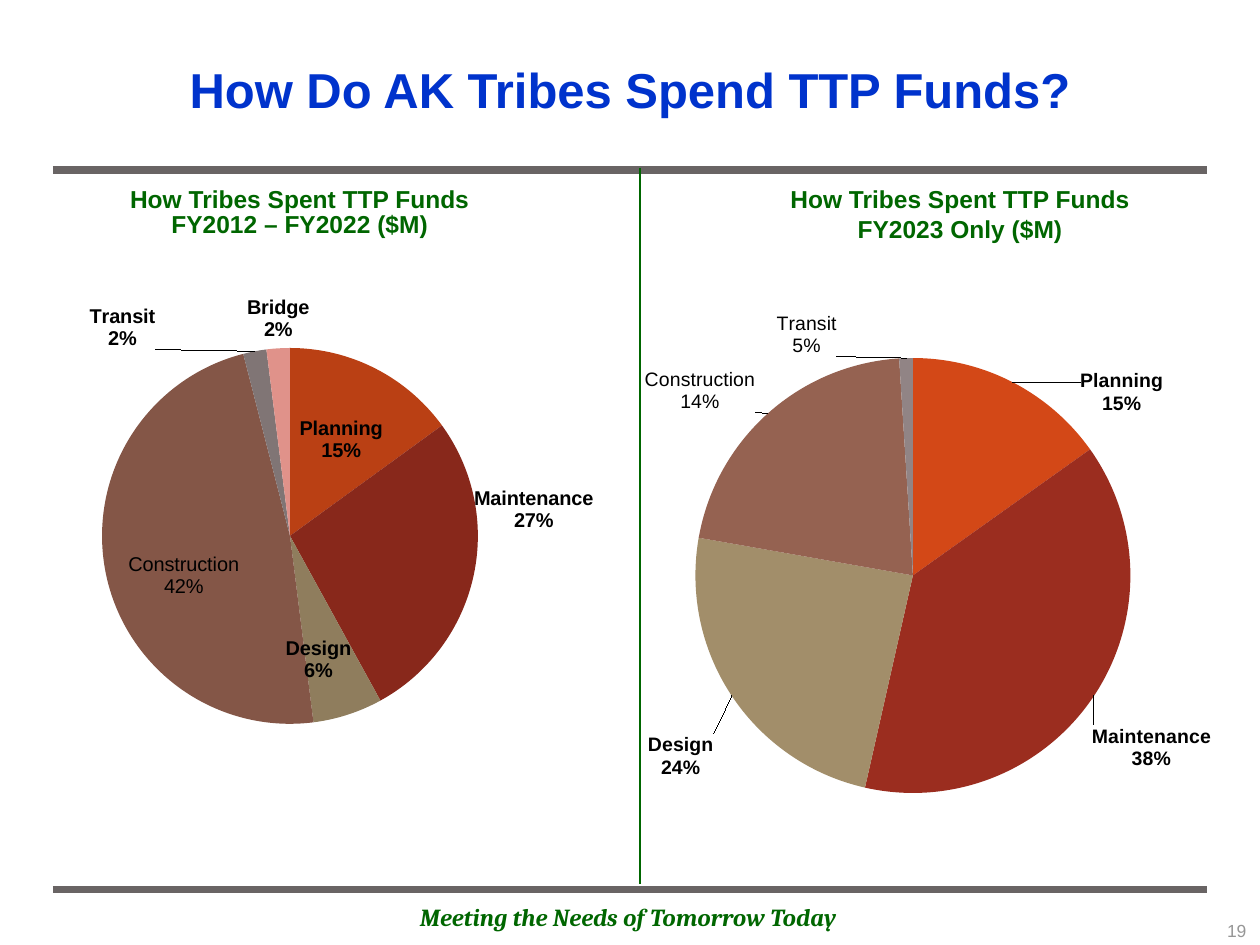
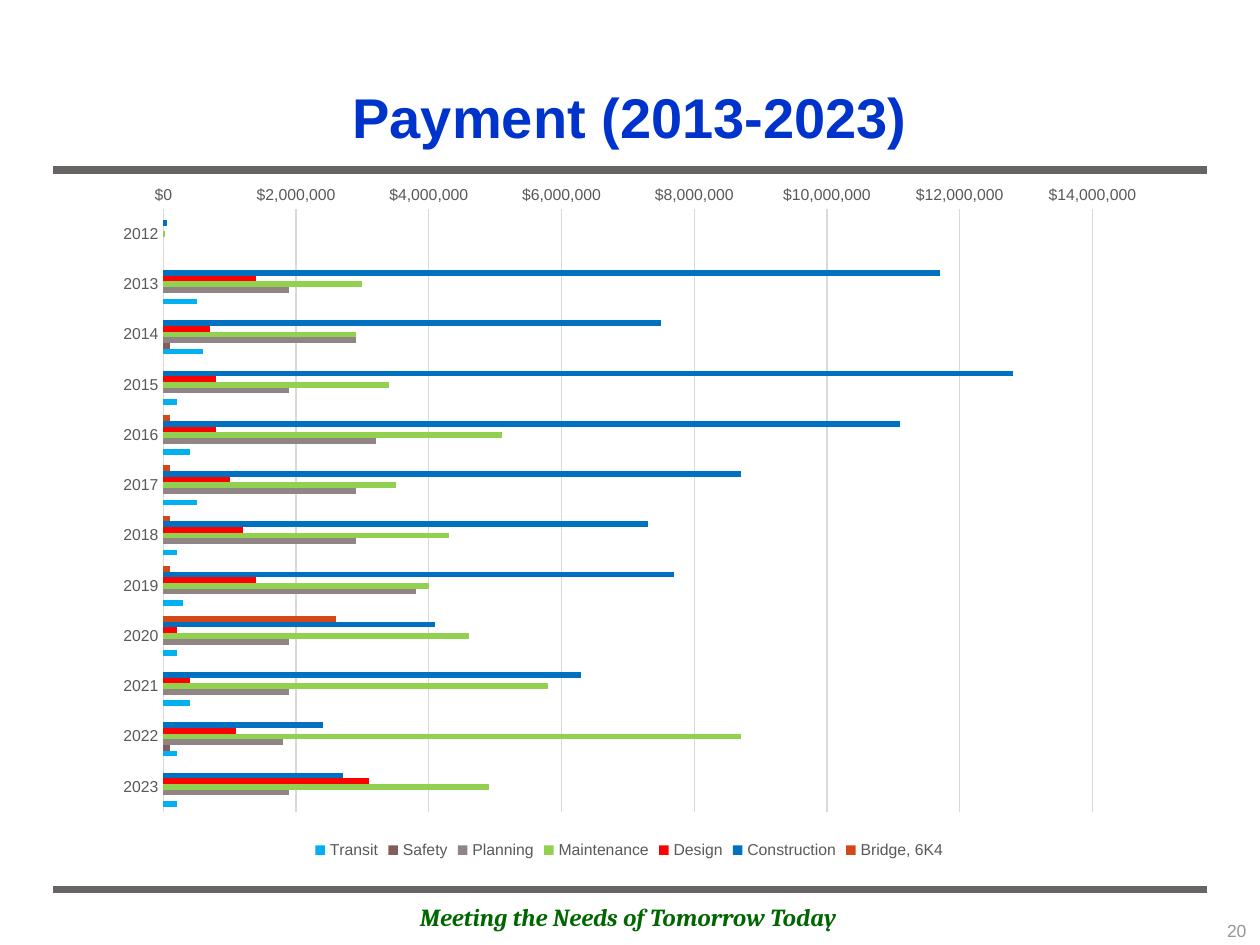
from math import cos, pi, sin

from lxml import etree
from pptx import Presentation
from pptx.chart.data import CategoryChartData
from pptx.dml.color import RGBColor
from pptx.enum.chart import XL_CHART_TYPE as ChartType
from pptx.enum.chart import XL_LABEL_POSITION as LabelPosition
from pptx.enum.chart import XL_LEGEND_POSITION as LegendPosition
from pptx.enum.chart import XL_TICK_MARK as TickMark
from pptx.enum.shapes import MSO_CONNECTOR as Connector
from pptx.enum.text import MSO_ANCHOR as Anchor
from pptx.enum.text import PP_ALIGN as Align
from pptx.oxml import parse_xml
from pptx.oxml.ns import nsdecls, qn
from pptx.util import Pt

# Shared look
BLUE, GREEN, BAND, GRAY = "0033CC", "006600", "696464", "969696"
AXIS_TEXT, GRID = "595959", "D9D9D9"
MOTTO = "Meeting the Needs of Tomorrow Today"

# Pie slide: slices are (name, value, colour, label centre, own label text)
SPENDING_TITLE = "How Do AK Tribes Spend TTP Funds?"
SUBTITLES = [
    ((12.2, 103.7, 318.2, 36), "How Tribes Spent TTP Funds\vFY2012 – FY2022 ($M)"),
    ((389.5, 106.6, 318.2, 36), "How Tribes Spent TTP Funds\nFY2023 Only ($M)"),
]
PIES = [
    {"frame": (-26.6, 159.8, 388.1, 291.6), "centre": (165.7, 306.3),
     "radius": 107.4, "size": 11.4,
     "slices": [
         ("Planning", 15, "BA4014", (195, 251), None),
         ("Maintenance", 27, "88281B", (305, 291), None),
         ("Design", 6, "8F7D5D", (182, 377), None),
         ("Construction", 48, "845647", (105, 329), "Construction\n42%"),
         ("Transit", 2, "807575", (70, 187), None),
         ("Safety", 0, "765252", (223, 183), None),
         ("Bridge", 2, "E0928A", (159, 182), None)]},
    {"frame": (339.8, 164.9, 380.2, 298.8), "centre": (521.7, 328.9),
     "radius": 124.3, "size": 11.1,
     "slices": [
         ("Planning", 15, "D34817", (641, 224), None),
         ("Maintenance", 38, "9B2D1F", (658, 427), None),
         ("Design", 24, "A28E6A", (389, 432), None),
         ("Construction", 21, "956251", (400, 223), "Construction\n14%"),
         ("Transit", 1, "918485", (461, 191), "Transit\n5%")]},
]

# Payment slide: values in millions of dollars, 2012 to 2023
PAYMENT_TITLE = "Payment (2013-2023)"
PAYMENT_FRAME = (58.3, 97.9, 602.6, 396)
PAYMENT_PLOT = (93.4, 119.4, 530.9, 344.6)
YEARS = [str(year) for year in range(2012, 2024)]
NO = None
PAYMENTS = [
    ("Bridge, 6K4", "D34817", [NO, NO, NO, NO, 0.1, 0.1, 0.1, 0.1, 2.6, NO, NO, NO]),
    ("Construction", "0070C0",
     [0.05, 11.7, 7.5, 12.8, 11.1, 8.7, 7.3, 7.7, 4.1, 6.3, 2.4, 2.7]),
    ("Design", "FF0000", [NO, 1.4, 0.7, 0.8, 0.8, 1, 1.2, 1.4, 0.2, 0.4, 1.1, 3.1]),
    ("Maintenance", "92D050",
     [0.02, 3, 2.9, 3.4, 5.1, 3.5, 4.3, 4, 4.6, 5.8, 8.7, 4.9]),
    ("Planning", "918485",
     [NO, 1.9, 2.9, 1.9, 3.2, 2.9, 2.9, 3.8, 1.9, 1.9, 1.8, 1.9]),
    ("Safety", "855D5D", [NO, NO, 0.1, NO, NO, NO, NO, NO, NO, NO, 0.1, NO]),
    ("Transit", "00B0F0",
     [NO, 0.5, 0.6, 0.2, 0.4, 0.5, 0.2, 0.3, 0.2, 0.4, 0.2, 0.2]),
]


def color(value):
    return RGBColor.from_string(value)


def points(numbers):
    return [Pt(number) for number in numbers]


def set_font(font, size, value, bold=False, italic=False, name="Arial"):
    font.name, font.size, font.bold, font.italic = name, Pt(size), bold, italic
    font.color.rgb = color(value)


def add_text(page, frame, text, size, value, align=Align.CENTER, anchor=Anchor.TOP,
             spacing=None, gap=0, **style):
    box = page.shapes.add_textbox(*points(frame))
    text_frame = box.text_frame
    text_frame.word_wrap = True
    text_frame.vertical_anchor = anchor
    text_frame.text = text
    for index, para in enumerate(text_frame.paragraphs):
        para.alignment = align
        para.line_spacing = spacing
        para.space_before = Pt(gap if index else 0)
        for span in para.runs:
            set_font(span.font, size, value, **style)


def add_line(page, start, end, value, width):
    line = page.shapes.add_connector(Connector.STRAIGHT, *points(start + end))
    line.line.color.rgb = color(value)
    line.line.width = Pt(width)
    etree.SubElement(line._element.spPr, qn("a:effectLst"))


def add_page(deck, title, title_frame, title_size, number):
    page = deck.slides.add_slide(deck.slide_layouts[6])
    for y in (508.3, 97.2):
        add_line(page, (30.2, y), (689.8, y), BAND, 4.5)
    add_text(page, (88.6, 511.9, 540.7, 24.5), MOTTO, 14, GREEN,
             bold=True, italic=True, name="Cambria")
    add_text(page, title_frame, title, title_size, BLUE, anchor=Anchor.MIDDLE, bold=True)
    add_text(page, (629.3, 522, 90, 23.8), str(number), 10, GRAY, Align.RIGHT)
    return page


def layout_xml(x, y, size=None):
    """Manual layout; with a size it places the inner plot area."""
    parts = f'<c:x val="{x:.4f}"/><c:y val="{y:.4f}"/>'
    if size:
        parts = ('<c:layoutTarget val="inner"/><c:xMode val="edge"/><c:yMode val="edge"/>'
                 f'{parts}<c:w val="{size[0]:.4f}"/><c:h val="{size[1]:.4f}"/>')
    return parse_xml(f'<c:layout {nsdecls("c")}><c:manualLayout>{parts}'
                     '</c:manualLayout></c:layout>')


def add_chart(page, kind, frame, plot_box, data):
    chart = page.shapes.add_chart(kind, *points(frame), data).chart
    chart.has_title = False
    chart.has_legend = False
    chart.font.name, chart.font.size = "Arial", Pt(10)
    left, top, width, height = frame
    x, y, plot_width, plot_height = plot_box
    area = chart.element.find(".//" + qn("c:plotArea"))
    for old in area.findall(qn("c:layout")):
        area.remove(old)
    area.insert(0, layout_xml((x - left) / width, (y - top) / height,
                              (plot_width / width, plot_height / height)))
    return chart


def add_pie(page, pie):
    slices, radius = pie["slices"], pie["radius"]
    centre_x, centre_y = pie["centre"]
    data = CategoryChartData()
    data.categories = [item[0] for item in slices]
    data.add_series("Series 1", [item[1] for item in slices])
    plot_box = (centre_x - radius, centre_y - radius, 2 * radius, 2 * radius)
    chart = add_chart(page, ChartType.PIE, pie["frame"], plot_box, data)
    plot = chart.plots[0]
    plot.vary_by_categories = True
    series = plot.series[0]
    labels = series.data_labels
    labels.show_value = False
    labels.show_category_name = labels.show_percentage = True
    set_font(labels.font, pie["size"], "000000", bold=True)

    total, before = sum(item[1] for item in slices), 0
    for index, (_, value, fill, (label_x, label_y), own_text) in enumerate(slices):
        point = series.points[index]
        point.format.fill.solid()
        point.format.fill.fore_color.rgb = color(fill)
        label = point.data_label
        if own_text:
            label.text_frame.text = own_text
            for para in label.text_frame.paragraphs:
                set_font(para.runs[0].font, pie["size"], "000000")
        else:
            set_font(label.font, pie["size"], "000000", bold=True)
        label.position = LabelPosition.CENTER

        # Shift the label from the middle of its slice to its own place
        angle = 2 * pi * (before + value / 2) / total
        before += value
        shift_x = label_x - centre_x - radius / 2 * sin(angle)
        shift_y = label_y - centre_y + radius / 2 * cos(angle)
        node = chart.element.xpath(f'.//c:dLbl[c:idx/@val="{index}"]')[0]
        for old in node.findall(qn("c:layout")):
            node.remove(old)
        node.insert(1, layout_xml(shift_x / pie["frame"][2], shift_y / pie["frame"][3]))
        for tag, shown in (("showVal", 0), ("showCatName", 1), ("showPercent", 1)):
            node.find(qn("c:" + tag)).set("val", str(shown))
        separator = parse_xml(f'<c:separator {nsdecls("c")}>\n</c:separator>')
        node.find(qn("c:showPercent")).getnext().addnext(separator)


def add_payments(page):
    data = CategoryChartData(number_format='"$"#,##0')
    data.categories = YEARS
    for name, _, millions in PAYMENTS:
        data.add_series(name, [value if value is None else round(value * 1_000_000)
                               for value in millions])
    chart = add_chart(page, ChartType.BAR_CLUSTERED, PAYMENT_FRAME, PAYMENT_PLOT, data)
    plot = chart.plots[0]
    plot.vary_by_categories = False
    plot.gap_width, plot.overlap = 182, 0
    for series, (_, fill, _) in zip(plot.series, PAYMENTS):
        series.format.fill.solid()
        series.format.fill.fore_color.rgb = color(fill)
        series.invert_if_negative = False

    # Axes: years run downwards, so dollars stand on top
    years, dollars = chart.category_axis, chart.value_axis
    for axis in (years, dollars):
        axis.major_tick_mark = axis.minor_tick_mark = TickMark.NONE
        set_font(axis.tick_labels.font, 9, AXIS_TEXT)
    years.reverse_order = True
    dollars.minimum_scale, dollars.maximum_scale = 0, 14_000_000
    dollars.major_unit = 2_000_000
    dollars.tick_labels.number_format = '"$"#,##0'
    dollars.tick_labels.number_format_is_linked = False
    dollars.format.line.fill.background()
    for line in (years.format.line, dollars.major_gridlines.format.line):
        line.color.rgb = color(GRID)
        line.width = Pt(0.75)

    chart.has_legend = True
    chart.legend.position = LegendPosition.BOTTOM
    chart.legend.include_in_layout = False
    set_font(chart.legend.font, 9, AXIS_TEXT)


def main():
    deck = Presentation()
    deck.slide_width, deck.slide_height = Pt(720), Pt(540)

    # Spending pies
    page = add_page(deck, SPENDING_TITLE, (36, 17.3, 648, 67), 28, 19)
    for frame, text in SUBTITLES:
        add_text(page, frame, text, 14, GREEN, anchor=Anchor.BOTTOM,
                 spacing=0.85, gap=2.8, bold=True)
    for pie in PIES:
        add_pie(page, pie)
    add_line(page, (365.8, 95.8), (365.8, 505.4), GREEN, 1.5)

    # Payments by year
    page = add_page(deck, PAYMENT_TITLE, (36, 21.6, 648, 90), 32, 20)
    add_payments(page)

    deck.save("out.pptx")


if __name__ == "__main__":
    main()
